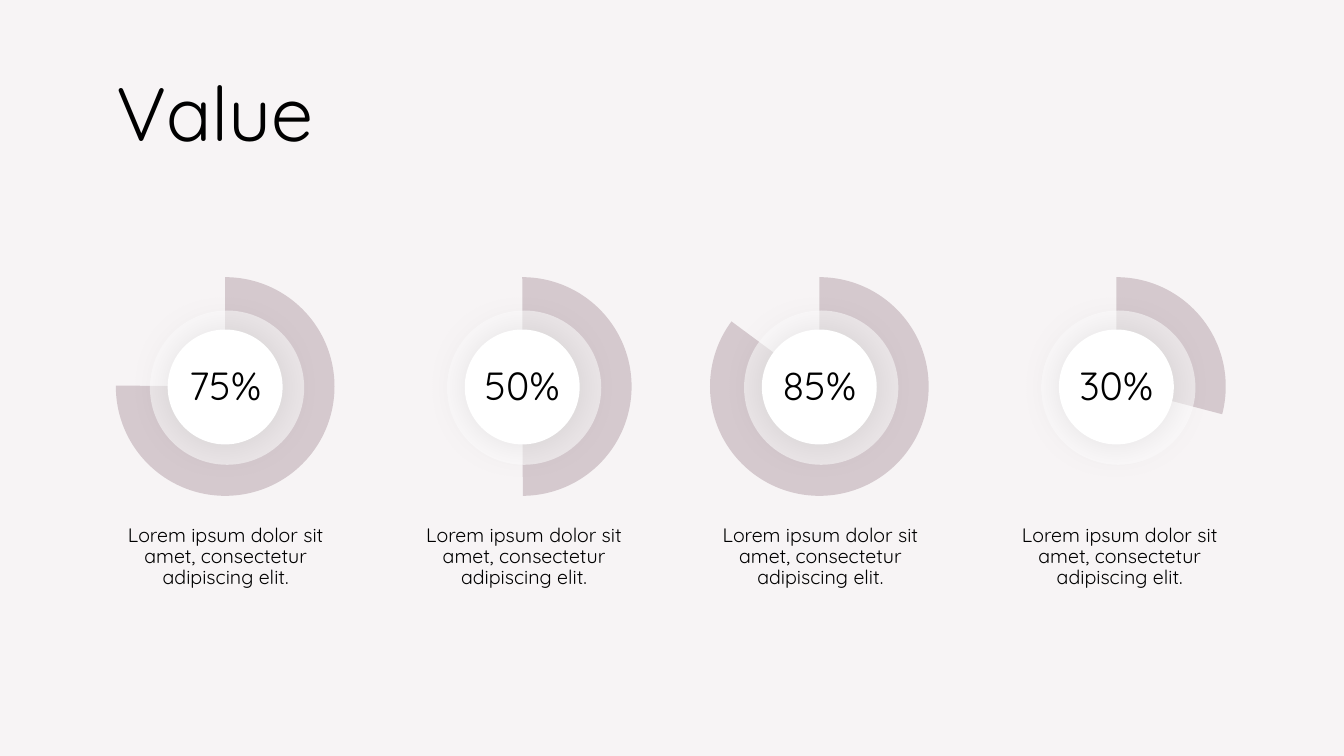
from lxml.etree import SubElement
from pptx import Presentation
from pptx.dml.color import RGBColor
from pptx.enum.shapes import MSO_SHAPE
from pptx.enum.text import MSO_ANCHOR, PP_ALIGN
from pptx.oxml.ns import qn
from pptx.util import Pt

FONT = "Quicksand"
BLACK = RGBColor(0x00, 0x00, 0x00)
WHITE = RGBColor(0xFF, 0xFF, 0xFF)
MAUVE = RGBColor(0xD5, 0xC9, 0xCE)
BACKGROUND = RGBColor(0xF7, 0xF4, 0xF5)

CAPTION = "Lorem ipsum dolor sit amet, consectetur adipiscing elit."
GAUGE_LEFT, GAUGE_TOP, GAUGE_STEP = 82.8, 198, 212.2
ARC_START = 162
GAUGES = [
    ("75%", 108.304, 78.5),
    ("50%", 53.808, 291.6),
    ("85%", 129.918, 503.3),
    ("30%", 8.825, 717.1),
]


def write_text(shape, text, size, alignment, line_spacing=1.0):
    """Put one styled paragraph into a shape."""
    shape.text_frame.word_wrap = True
    shape.text_frame.text = text
    paragraph = shape.text_frame.paragraphs[0]
    paragraph.alignment = alignment
    paragraph.line_spacing = line_spacing
    font = paragraph.runs[0].font
    font.name, font.size = FONT, Pt(size)
    font.color.rgb = BLACK


def add_text(slide, left, top, width, height, text, size, alignment):
    """Add a text box with tight line spacing."""
    box = slide.shapes.add_textbox(Pt(left), Pt(top), Pt(width), Pt(height))
    write_text(box, text, size, alignment, 0.9)


def add_round_shape(slide, kind, left, top, size, color):
    """Add a square-framed shape with a plain fill and no outline."""
    shape = slide.shapes.add_shape(kind, Pt(left), Pt(top), Pt(size), Pt(size))
    shape.shadow.inherit = False
    shape.fill.solid()
    shape.fill.fore_color.rgb = color
    shape.line.fill.background()
    return shape


def set_opacity(color_element, percent):
    """Make a colour element partly transparent."""
    SubElement(color_element, qn("a:alpha"), val=str(percent * 1000))


def add_glow_shadow(shape, blur, percent):
    """Add a soft black shadow centred behind a shape."""
    effects = shape.element.spPr.find(qn("a:effectLst"))
    shadow = SubElement(effects, qn("a:outerShdw"), blurRad=str(Pt(blur)),
                        dist="0", dir="0", algn="ctr", rotWithShape="0")
    set_opacity(SubElement(shadow, qn("a:srgbClr"), val=str(BLACK)), percent)


def add_gauge(slide, left, top, label, arc_end):
    """Add a ring gauge with its percentage in the middle."""
    arc = add_round_shape(slide, MSO_SHAPE.ARC, left, top, 156.2, MAUVE)
    arc.adjustments[0] = ARC_START
    arc.adjustments[1] = arc_end

    halo = add_round_shape(slide, MSO_SHAPE.OVAL, left + 24.3, top + 23.8, 110.2, WHITE)
    set_opacity(halo.element.spPr.find(qn("a:solidFill"))[0], 54)

    center = add_round_shape(slide, MSO_SHAPE.OVAL, left + 37, top + 37.4, 82.1, WHITE)
    add_glow_shadow(center, 30, 10)
    frame = center.text_frame
    frame.margin_left = frame.margin_top = frame.margin_right = 0
    frame.margin_bottom = Pt(3.6)
    frame.vertical_anchor = MSO_ANCHOR.MIDDLE
    write_text(center, label, 28, PP_ALIGN.CENTER)


def main():
    """Build and save the slide."""
    presentation = Presentation()
    presentation.slide_width, presentation.slide_height = Pt(960), Pt(540)
    slide = presentation.slides.add_slide(presentation.slide_layouts[6])
    slide.background.fill.solid()
    slide.background.fill.fore_color.rgb = BACKGROUND

    add_text(slide, 76.3, 51.1, 800.6, 101.5, "Value", 54, PP_ALIGN.LEFT)
    for index, (label, arc_end, caption_left) in enumerate(GAUGES):
        add_text(slide, caption_left, 371.5, 165.6, 85.7, CAPTION, 14, PP_ALIGN.CENTER)
        add_gauge(slide, GAUGE_LEFT + index * GAUGE_STEP, GAUGE_TOP, label, arc_end)

    presentation.save("out.pptx")


if __name__ == "__main__":
    main()
